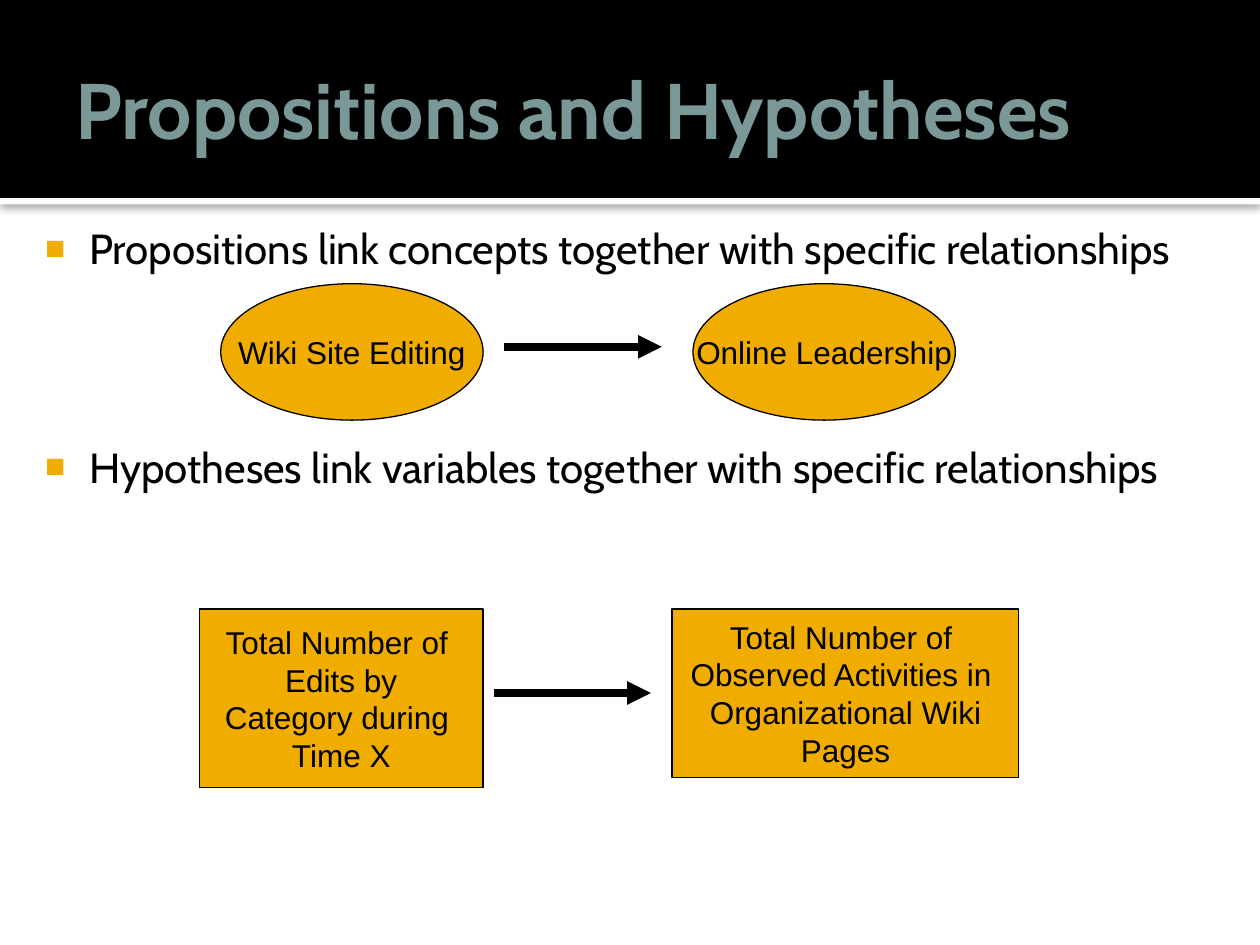
from lxml import etree
from pptx import Presentation, util as u
from pptx.dml.color import RGBColor
from pptx.enum import shapes, text
from pptx.oxml import parse_xml
from pptx.oxml.ns import nsdecls, qn

# Content: each diagram has two nodes (left, top, width, height, lines) and an arrow (x1, x2, y), in cm
TITLE = "Propositions and Hypotheses"
BULLETS = [
    "Propositions link concepts together with specific relationships",
    "Hypotheses link variables together with specific relationships",
]
OVAL, RECT = shapes.MSO_SHAPE.OVAL, shapes.MSO_SHAPE.RECTANGLE
DIAGRAMS = [
    (OVAL, [(4.45, 5.72, 5.29, 2.75, ["Wiki Site Editing"]),
            (13.97, 5.72, 5.29, 2.75, ["Online Leadership"])],
     (10.16, 13.34, 6.99)),
    (RECT, [(4.02, 12.28, 5.72, 3.6,
             ["Total Number of ", "Edits by", "Category during ", "Time X"]),
            (13.55, 12.28, 6.99, 3.39,
             ["Total Number of ", "Observed Activities in ", "Organizational Wiki", "Pages"])],
     (9.95, 13.12, 13.97)),
]
COLORS = {"black": "000000", "white": "FFFFFF", "title": "7B9899", "gold": "F0AD00"}


def rgb(name):
    return RGBColor.from_string(COLORS[name])


def add_run(p, words, font, size, color, bold=False):
    r = p.add_run()
    r.text = words
    r.font.name, r.font.size, r.font.bold = font, u.Pt(size), bold
    r.font.color.rgb = rgb(color)


def place(sp, left, top, width, height):
    sp.left, sp.top, sp.width, sp.height = map(u.Cm, (left, top, width, height))


def set_frame(tf, anchor, left, top, right, bottom):
    tf.word_wrap, tf.auto_size = True, text.MSO_AUTO_SIZE.NONE
    tf.vertical_anchor = anchor
    tf.margin_left, tf.margin_top = u.Cm(left), u.Cm(top)
    tf.margin_right, tf.margin_bottom = u.Cm(right), u.Cm(bottom)


def add_bullet(p):
    pPr = p._p.get_or_add_pPr()
    pPr.set("marL", str(u.Cm(1.22)))
    pPr.set("indent", str(-u.Cm(0.89)))
    color = etree.SubElement(pPr, qn("a:buClr"))
    etree.SubElement(color, qn("a:srgbClr"), val=COLORS["gold"])
    etree.SubElement(pPr, qn("a:buSzPct"), val="80000")
    etree.SubElement(pPr, qn("a:buFont"), typeface="Arial")
    etree.SubElement(pPr, qn("a:buChar"), char="■")


def add_shape(parent, kind, box, fill):
    sp = parent.shapes.add_shape(kind, *map(u.Cm, box))
    sp.shadow.inherit = False
    sp.fill.solid()
    sp.fill.fore_color.rgb = rgb(fill)
    return sp


def add_node(parent, kind, box, lines):
    sp = add_shape(parent, kind, box, "gold")
    sp.line.color.rgb, sp.line.width = rgb("black"), u.Pt(0.75)
    tf = sp.text_frame
    tf.word_wrap, tf.vertical_anchor = False, text.MSO_ANCHOR.MIDDLE
    for i, line in enumerate(lines):
        p = tf.add_paragraph() if i else tf.paragraphs[0]
        p.alignment = text.PP_ALIGN.CENTER
        add_run(p, line, "Arial", 18, "black")


def add_arrow(parent, x1, x2, y):
    cx = parent.shapes.add_connector(shapes.MSO_CONNECTOR.STRAIGHT,
                                     u.Cm(x1), u.Cm(y), u.Cm(x2), u.Cm(y))
    cx.line.color.rgb, cx.line.width = rgb("black"), u.Pt(4.5)
    etree.SubElement(cx.line._get_or_add_ln(), qn("a:tailEnd"), type="triangle")
    etree.SubElement(cx._element.spPr, qn("a:effectLst"))


def main():
    prs = Presentation()
    prs.slide_width, prs.slide_height = u.Cm(25.4), u.Cm(19.05)
    s = prs.slides.add_slide(prs.slide_layouts[1])
    title, body = s.placeholders

    # Header band and its shadowed white rule, behind the placeholders
    rule = add_shape(s, RECT, (0, 3.99, 25.4, 0.13), "white")
    band = add_shape(s, RECT, (0, 0, 25.4, 3.99), "black")
    for i, sp in enumerate((rule, band)):
        sp.line.fill.background()
        s.shapes._spTree.insert(2 + i, sp._element)
    effects = rule._element.spPr.find(qn("a:effectLst"))
    effects.append(parse_xml(
        f'<a:outerShdw {nsdecls("a")} blurRad="{u.Pt(5)}" dist="{u.Pt(0.8)}" dir="5400000">'
        f'<a:srgbClr val="{COLORS["black"]}"><a:alpha val="60000"/></a:srgbClr></a:outerShdw>'))

    # Title
    place(title, 1.27, 0.43, 22.86, 3.48)
    set_frame(title.text_frame, text.MSO_ANCHOR.MIDDLE, 0.25, 0.13, 0.13, 0.13)
    p = title.text_frame.paragraphs[0]
    p.alignment = text.PP_ALIGN.LEFT
    add_run(p, TITLE, "Cabin", 45, "title", bold=True)

    # Bullets, spaced apart to leave room for the first diagram
    place(body, 0.43, 4.24, 23.62, 12.7)
    tf = body.text_frame
    set_frame(tf, text.MSO_ANCHOR.TOP, 0.15, 0.25, 0.25, 0.13)
    for i, words in enumerate(BULLETS):
        p = tf.add_paragraph() if i else tf.paragraphs[0]
        p.space_before = u.Pt(96 * i)
        add_bullet(p)
        add_run(p, words, "Cabin", 24, "black")

    # Diagrams
    for kind, nodes, arrow in DIAGRAMS:
        group = s.shapes.add_group_shape()
        for *box, lines in nodes:
            add_node(group, kind, box, lines)
        add_arrow(group, *arrow)

    prs.save("out.pptx")


if __name__ == "__main__":
    main()
